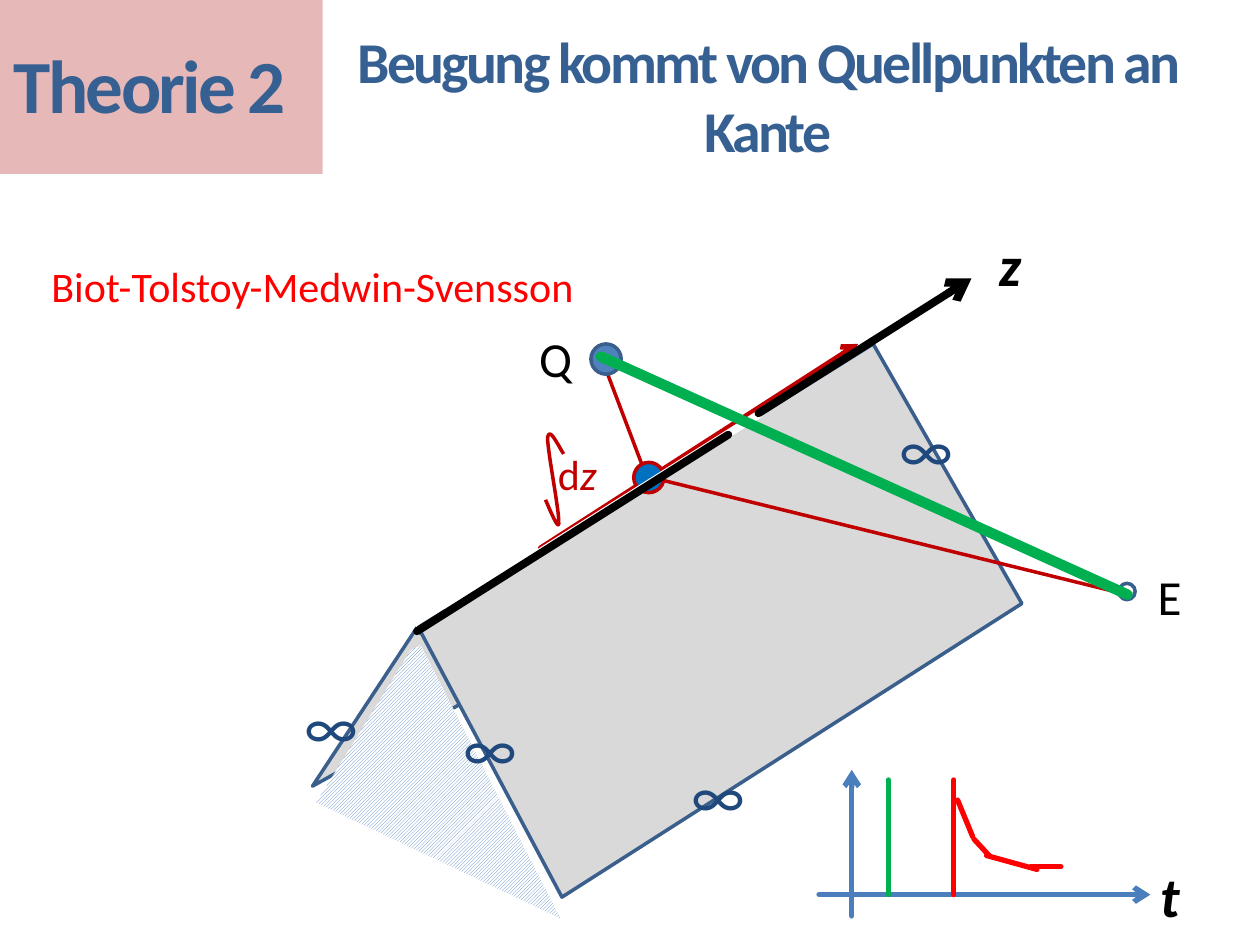
import pptx
import pptx.util
import pptx.dml.color
import pptx.enum.dml
import pptx.enum.shapes
import pptx.enum.text
import pptx.oxml

Inches = pptx.util.Inches
Pt = pptx.util.Pt
RGB = pptx.dml.color.RGBColor.from_string
KIND = pptx.enum.shapes.MSO_SHAPE
ALIGN = pptx.enum.text.PP_ALIGN
ANCHOR = pptx.enum.text.MSO_ANCHOR
SIZE = pptx.enum.text.MSO_AUTO_SIZE
NS = 'xmlns:a="http://schemas.openxmlformats.org/drawingml/2006/main"'

hues = {
    "black": "000000", "white": "FFFFFF", "gray": "D9D9D9", "pink": "E6B9B8",
    "blue": "4F81BD", "edge": "3A5F8C", "axis": "4B7EBC", "head": "376092",
    "navy": "1F497D", "point": "0070C0", "dark": "C00000", "red": "FF0000",
    "green": "00B050",
}

deck = pptx.Presentation()
deck.slide_width = Inches(10)
deck.slide_height = Inches(7.5)
slide = deck.slides.add_slide(deck.slide_layouts[5])
shapes = slide.shapes


def draw_line(x1, y1, x2, y2, hue, width, arrow=False):
    line = shapes.add_connector(pptx.enum.shapes.MSO_CONNECTOR.STRAIGHT,
                                Inches(x1), Inches(y1), Inches(x2), Inches(y2))
    line.line.color.rgb = RGB(hues[hue])
    line.line.width = Pt(width)
    ln = line.line._get_or_add_ln() if hasattr(line.line, "_get_or_add_ln") else line.get_or_add_ln()
    ln.set("cap", "rnd")
    if arrow:
        ln.append(pptx.oxml.parse_xml(f'<a:tailEnd {NS} type="arrow"/>'))
    line._element.spPr.append(pptx.oxml.parse_xml(f"<a:effectLst {NS}/>"))


def write(box, words, size, hue, bold=False, slant=False, wrap=False):
    frame = box.text_frame
    frame.word_wrap = wrap
    frame.auto_size = SIZE.NONE if wrap else SIZE.SHAPE_TO_FIT_TEXT
    para = frame.paragraphs[0]
    para.text = words[0]
    for word in words[1:]:
        para.add_run().text = word
    for run in para.runs:
        run.font.name = "Calibri"
        run.font.size = Pt(size)
        run.font.bold = bold
        run.font.italic = slant
        run.font.color.rgb = RGB(hues[hue])
    return para


banner = shapes.add_shape(KIND.RECTANGLE, Inches(-0.03), Inches(-0.04), Inches(2.59), Inches(1.42))
banner.shadow.inherit = False
banner.fill.solid()
banner.fill.fore_color.rgb = RGB(hues["pink"])
banner.line.fill.background()

title = shapes.title
title.left, title.top, title.width, title.height = map(Inches, (2.61, 0.13, 6.97, 1.25))
tag = shapes.add_textbox(Inches(-0.1), Inches(0.04), Inches(2.58), Inches(1.25))
for box, words, size in [(title, "Beugung kommt von Quellpunkten an Kante", 33),
                         (tag, "Theorie 2", 42.9)]:
    para = write(box, [words], size, "head", bold=True, wrap=True)
    para.alignment = ALIGN.CENTER
    para.runs[0].font._element.set("spc", "-150")
    box.text_frame.vertical_anchor = ANCHOR.MIDDLE

curve = [(4.51, 3.62)]
for ends in [((4.47, 3.51), (4.44, 3.39), (4.41, 3.47)),
             ((4.39, 3.56), (4.39, 4.06), (4.37, 4.14)),
             ((4.36, 4.22), (4.33, 4.09), (4.3, 3.95))]:
    knots = [curve[-1], *ends]
    for step in range(1, 13):
        t = step / 12
        parts = ((1 - t) ** 3, 3 * t * (1 - t) ** 2, 3 * t * t * (1 - t), t ** 3)
        curve.append(tuple(sum(p * k[i] for p, k in zip(parts, knots)) for i in (0, 1)))

paths = [
    ([(3.31, 4.98), (2.48, 6.24), (3.67, 5.58)], False, "gray", "edge", 0),
    ([(3.32, 4.98), (6.93, 2.73), (8.11, 4.79), (4.46, 7.12)], True, "gray", "edge", 0),
    ([(3.26, 5.16), (2.51, 6.37), (4.45, 7.29), (3.34, 5.12)], False, "hatch", None, 0),
    ([(4.77, 2.83), (5.13, 3.78), (8.95, 4.72)], False, None, "dark", 0),
    (curve, False, None, "dark", 349),
]
dots = [(4.69, 2.73, 0.24, "blue", "edge"), (8.88, 4.63, 0.13, "white", "edge"),
        (5.03, 3.67, 0.24, "point", "dark")]

for points, closed, fill, edge, turn in paths:
    spots = [(Inches(x), Inches(y)) for x, y in points]
    maker = shapes.build_freeform(*spots[0])
    maker.add_line_segments(spots[1:], close=closed)
    form = maker.convert_to_shape()
    form.shadow.inherit = False
    form.rotation = turn
    if fill == "hatch":
        form.fill.patterned()
        form.fill.pattern = pptx.enum.dml.MSO_PATTERN.LIGHT_UPWARD_DIAGONAL
        form.fill.fore_color.rgb = RGB(hues["blue"])
        form.fill.back_color.rgb = RGB(hues["white"])
    elif fill:
        form.fill.solid()
        form.fill.fore_color.rgb = RGB(hues[fill])
    else:
        form.fill.background()
    if edge:
        form.line.color.rgb = RGB(hues[edge])
        form.line.width = Pt(2)
    else:
        form.line.fill.background()

draw_line(4.29, 4.35, 6.81, 2.73, "dark", 3, True)

for x, y, size, fill, edge in dots:
    dot = shapes.add_shape(KIND.OVAL, Inches(x), Inches(y), Inches(size), Inches(size))
    dot.shadow.inherit = False
    dot.fill.solid()
    dot.fill.fore_color.rgb = RGB(hues[fill])
    dot.line.color.rgb = RGB(hues[edge])
    dot.line.width = Pt(2)

draw_line(6.76, 7.27, 6.76, 6.11, "axis", 3, True)
draw_line(6.5, 7.1, 9.13, 7.1, "axis", 3, True)
for ends in [(8.42, 6.88, 8.18, 6.88), (8.23, 6.9, 7.83, 6.79), (7.85, 6.79, 7.73, 6.66),
             (7.72, 6.64, 7.6, 6.35), (7.57, 7.1, 7.57, 6.19)]:
    draw_line(*ends, "red", 3)
draw_line(7.05, 7.1, 7.05, 6.19, "green", 3)

for x, y in [(2.32, 5.4), (3.58, 5.57), (5.39, 5.95), (7.04, 3.2)]:
    write(shapes.add_textbox(Inches(x), Inches(y), Inches(0.63), Inches(0.71)), ["∞"], 36, "navy")
for word, x, y in [("t", 9.11, 6.79), ("z", 7.83, 1.78)]:
    write(shapes.add_textbox(Inches(x), Inches(y), Inches(0.37), Inches(0.64)),
          [word], 32, "black", bold=True, slant=True)
for word, x, y in [("Q", 4.18, 2.49), ("E", 9.09, 4.38)]:
    para = write(shapes.add_textbox(Inches(x), Inches(y), Inches(0.67), Inches(0.63)),
                 [word], 28, "black", wrap=True)
    para.line_spacing = 1.15
    para.space_after = Pt(10)
write(shapes.add_textbox(Inches(0.31), Inches(2.02), Inches(4.4), Inches(0.5)),
      ["Biot-Tolstoy-Medwin-Svensson"], 24, "red")
para = write(shapes.add_textbox(Inches(4.33), Inches(3.51), Inches(0.51), Inches(0.5)),
             ["d", "z"], 24, "dark")
para.runs[1].font.italic = True

draw_line(3.56, 4.84, 6.02, 3.29, "white", 4.5)
draw_line(3.31, 5.01, 5.78, 3.45, "black", 4.5)
draw_line(4.77, 2.83, 8.95, 4.72, "green", 6)
draw_line(6.02, 3.28, 7.71, 2.21, "black", 4.5, True)

deck.save("out.pptx")
